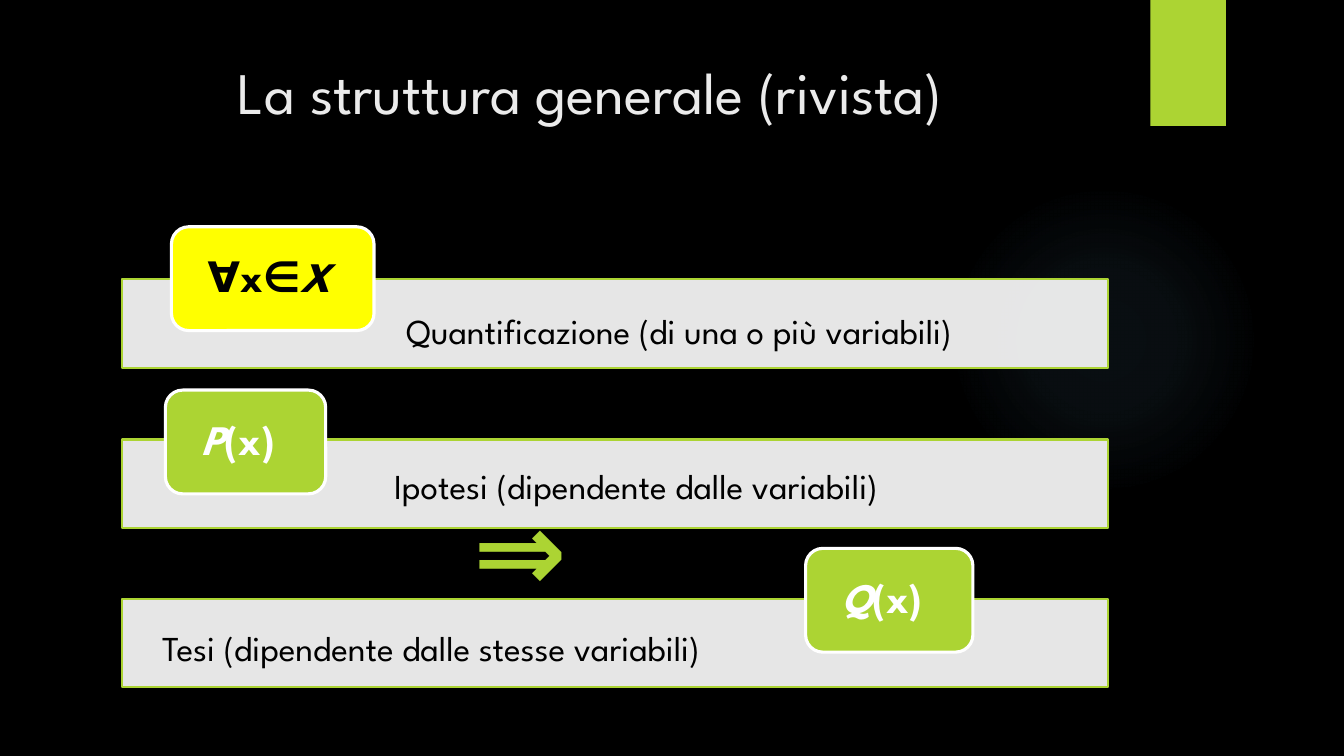
from dataclasses import dataclass

import pptx
import pptx.dml.color
import pptx.enum.shapes
import pptx.enum.text
import pptx.oxml
import pptx.oxml.ns
import pptx.util
from pptx.dml.color import RGBColor
from pptx.util import Inches

FONT = "League Spartan"
BLACK = RGBColor(0x00, 0x00, 0x00)
WHITE = RGBColor(0xFF, 0xFF, 0xFF)
GREEN = RGBColor(0xAC, 0xD4, 0x33)
YELLOW = RGBColor(0xFF, 0xFF, 0x00)
TITLE_GREY = RGBColor(0xEB, 0xEB, 0xEB)
GLOW_BLUE = RGBColor(0x7A, 0xC4, 0xF0)

SHAPES = pptx.enum.shapes.MSO_SHAPE
ALIGN = pptx.enum.text.PP_ALIGN
ANCHOR = pptx.enum.text.MSO_ANCHOR
NAMESPACE = pptx.oxml.ns.nsdecls("a")


@dataclass
class Box:
    left: float
    top: float
    width: float
    height: float


@dataclass
class Part:
    """One part of the statement: a bar, its formula tab and its caption."""
    bar_top: float
    tab: Box
    tab_fill: RGBColor
    formula_color: RGBColor
    formula: list[tuple[str, bool]]  # text, italic
    caption: str
    caption_box: Box


PARTS = [
    Part(2.77, Box(1.7, 2.25, 2.01, 1.03), YELLOW, BLACK,
         [("∀x∈", False), ("X", True)],
         "Quantificazione (di una o più variabili)", Box(3.93, 3.02, 6.77, 0.52)),
    Part(4.36, Box(1.64, 3.87, 1.59, 1.03), GREEN, WHITE,
         [("P", True), ("(x)", False)],
         "Ipotesi (dipendente dalle variabili)", Box(3.81, 4.56, 6.6, 0.52)),
    Part(5.94, Box(7.99, 5.44, 1.66, 1.03), GREEN, WHITE,
         [("Q", True), ("(x)", False)],
         "Tesi (dipendente dalle stesse variabili)", Box(1.51, 6.17, 6.6, 0.52)),
]


def add_shape(slide, kind, box: Box, fill: RGBColor, line: RGBColor | None = None,
              line_width: float = 0):
    shape = slide.shapes.add_shape(kind, Inches(box.left), Inches(box.top),
                                   Inches(box.width), Inches(box.height))
    shape.shadow.inherit = False
    shape.fill.solid()
    shape.fill.fore_color.rgb = fill
    if line is None:
        shape.line.fill.background()
    else:
        shape.line.color.rgb = line
        shape.line.width = pptx.util.Pt(line_width)
    return shape


def set_font(paragraph, size: float, color: RGBColor, bold: bool = False) -> None:
    paragraph.font.name = FONT
    paragraph.font.size = pptx.util.Pt(size)
    paragraph.font.color.rgb = color
    paragraph.font.bold = bold


def add_text(slide, text: str, box: Box, size: float, color: RGBColor,
             bold: bool = False, align=ALIGN.LEFT) -> None:
    shape = slide.shapes.add_textbox(Inches(box.left), Inches(box.top),
                                     Inches(box.width), Inches(box.height))
    shape.text_frame.word_wrap = True
    paragraph = shape.text_frame.paragraphs[0]
    paragraph.text = text
    paragraph.alignment = align
    set_font(paragraph, size, color, bold)


def add_glow(slide) -> None:
    shape = add_shape(slide, SHAPES.OVAL, Box(9.41, 1.83, 3.08, 3.08), GLOW_BLUE)
    stops = "".join(
        f'<a:gs pos="{position * 1000}"><a:srgbClr val="{GLOW_BLUE}">'
        f'<a:alpha val="{alpha * 1000}"/></a:srgbClr></a:gs>'
        for position, alpha in [(0, 7), (36, 6), (69, 0), (100, 0)])
    gradient = pptx.oxml.parse_xml(
        f'<a:gradFill {NAMESPACE}><a:gsLst>{stops}</a:gsLst><a:path path="circle">'
        '<a:fillToRect l="50000" t="50000" r="50000" b="50000"/></a:path></a:gradFill>')
    solid = shape._element.spPr.find(pptx.oxml.ns.qn("a:solidFill"))
    shape._element.spPr.replace(solid, gradient)


def add_part(slide, part: Part) -> None:
    # Bar, slightly transparent
    bar = add_shape(slide, SHAPES.RECTANGLE, Box(1.21, part.bar_top, 9.78, 0.88),
                    WHITE, GREEN, 1.5)
    color = bar._element.spPr.find(pptx.oxml.ns.qn("a:solidFill"))[0]
    color.append(pptx.oxml.parse_xml(f'<a:alpha {NAMESPACE} val="90000"/>'))

    # Formula tab
    tab = add_shape(slide, SHAPES.ROUNDED_RECTANGLE, part.tab, part.tab_fill, WHITE, 2.25)
    frame = tab.text_frame
    frame.word_wrap = True
    frame.vertical_anchor = ANCHOR.MIDDLE
    frame.margin_left = frame.margin_right = Inches(0.31)
    frame.margin_top = frame.margin_bottom = Inches(0.05)
    paragraph = frame.paragraphs[0]
    paragraph.alignment = ALIGN.LEFT
    paragraph.line_spacing = 0.9
    set_font(paragraph, 30, part.formula_color, bold=True)
    for text, italic in part.formula:
        run = paragraph.add_run()
        run.text = text
        run.font.italic = italic


def main() -> None:
    presentation = pptx.Presentation()
    presentation.slide_width = Inches(13.33)
    presentation.slide_height = Inches(7.5)
    slide = presentation.slides.add_slide(presentation.slide_layouts[6])
    slide.background.fill.solid()
    slide.background.fill.fore_color.rgb = BLACK

    # Decoration and title
    add_glow(slide)
    add_shape(slide, SHAPES.RECTANGLE, Box(11.41, 0, 0.75, 1.25), GREEN)
    add_text(slide, "La struttura generale (rivista)", Box(0.71, 0.5, 10.29, 1.53),
             42, TITLE_GREY, align=ALIGN.CENTER)

    # Bars with tabs, then the implication arrow and captions on top
    for part in PARTS:
        add_part(slide, part)
    add_text(slide, "⇒", Box(4.6, 4.71, 3.01, 1.45), 80, GREEN, bold=True)
    for part in PARTS:
        add_text(slide, part.caption, part.caption_box, 25, BLACK)

    presentation.save("out.pptx")


if __name__ == "__main__":
    main()
